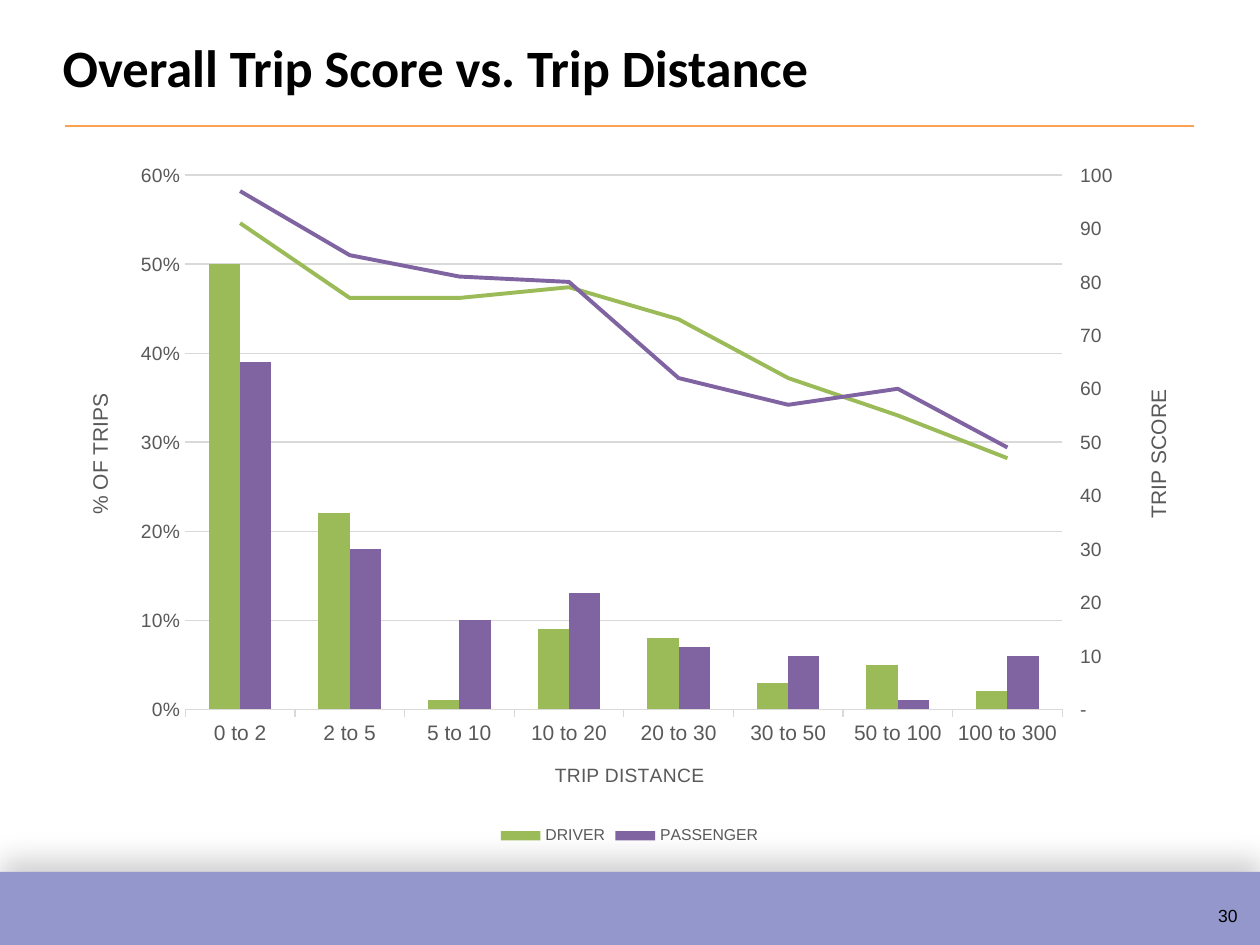
from copy import deepcopy

from pptx import Presentation
from pptx.chart.axis import CategoryAxis, ValueAxis
from pptx.chart.data import CategoryChartData
from pptx.dml.color import RGBColor
from pptx.enum.chart import XL_CHART_TYPE, XL_LEGEND_POSITION, XL_TICK_MARK
from pptx.enum.shapes import MSO_CONNECTOR, MSO_SHAPE
from pptx.enum.text import MSO_ANCHOR, PP_ALIGN
from pptx.oxml import parse_xml
from pptx.oxml.ns import nsdecls, qn
from pptx.util import Pt

SCALE = 914400 / 126
TITLE_ONLY = 5
COLUMNS = XL_CHART_TYPE.COLUMN_CLUSTERED
BOTTOM = XL_LEGEND_POSITION.BOTTOM
TICK_NONE, TICK_OUT = XL_TICK_MARK.NONE, XL_TICK_MARK.OUTSIDE
STRAIGHT = MSO_CONNECTOR.STRAIGHT
RECTANGLE = MSO_SHAPE.RECTANGLE
MIDDLE = MSO_ANCHOR.MIDDLE
LEFT, RIGHT = PP_ALIGN.LEFT, PP_ALIGN.RIGHT

BLACK, GREY, PALE = "000000", "595959", "D9D9D9"
GREEN, PURPLE = "9BBB59", "8064A2"
SCORE_FORMAT = '_(* #,##0_);_(* \\(#,##0\\);_(* "-"_);_(@_)'
DISTANCES = ["0 to 2", "2 to 5", "5 to 10", "10 to 20",
             "20 to 30", "30 to 50", "50 to 100", "100 to 300"]
SERIES = [
    ("DRIVER", [0.5, 0.22, 0.01, 0.09, 0.08, 0.03, 0.05, 0.02], GREEN),
    ("PASSENGER", [0.39, 0.18, 0.1, 0.13, 0.07, 0.06, 0.01, 0.06], PURPLE),
    ("Series 3", [91, 77, 77, 79, 73, 62, 55, 47], GREEN),
    ("Series 4", [97, 85, 81, 80, 62, 57, 60, 49], PURPLE),
]
SHARE_COUNT = 2


def px(*lengths):
    """Turn pixel lengths into EMU."""
    return [round(length * SCALE) for length in lengths]


def color(hex_string):
    """Turn a hex string into a colour."""
    return RGBColor.from_string(hex_string)


def set_font(font, size, hex_string, name="Arial", bold=False):
    """Format one font."""
    font.name, font.size, font.bold = name, Pt(size), bold
    font.color.rgb = color(hex_string)


def element(tag, content="", **attributes):
    """Make one chart XML element."""
    listed = "".join(f' {key}="{value}"' for key, value in attributes.items())
    return parse_xml(f'<c:{tag} {nsdecls("c")}{listed}>{content}</c:{tag}>')


def remove_children(parent, tag):
    """Remove every direct child with the given tag."""
    for child in parent.findall(qn(tag)):
        parent.remove(child)


def add_footer(slide):
    """Add the footer band, shadowed upwards, and the slide number."""
    band = slide.shapes.add_shape(RECTANGLE, *px(0, 872, 1260, 73))
    band.fill.solid()
    band.fill.fore_color.rgb = color("9497CC")
    band.line.fill.background()
    band._element.spPr.append(parse_xml(
        f'<a:effectLst {nsdecls("a")}>'
        f'<a:outerShdw blurRad="{Pt(16)}" dist="{Pt(8)}" dir="{277 * 60000}" rotWithShape="0">'
        f'<a:srgbClr val="{BLACK}"><a:alpha val="19000"/></a:srgbClr>'
        '</a:outerShdw></a:effectLst>'))
    box = slide.shapes.add_textbox(*px(1203, 888, 47, 43))
    box.text_frame.word_wrap = False
    para = box.text_frame.paragraphs[0]
    para.text = "30"
    para.alignment, para.line_spacing, para.space_before = RIGHT, 1.5, Pt(6)
    set_font(para.font, 10, BLACK)


def add_heading(slide, text):
    """Fill the title and draw the rule below it."""
    title = slide.shapes.title
    title.left, title.top, title.width, title.height = px(50, 28, 1153, 77)
    title.text_frame.text = text
    title.text_frame.vertical_anchor = MIDDLE
    para = title.text_frame.paragraphs[0]
    para.alignment = LEFT
    set_font(para.font, 30, BLACK, "Calibri", True)
    rule = slide.shapes.add_connector(STRAIGHT, *px(65, 126, 1194, 126))
    rule.line.color.rgb = color("FBA252")
    rule.line.width = Pt(1)
    rule._element.spPr.append(parse_xml(f'<a:effectLst {nsdecls("a")}/>'))


def pale_line(line):
    """Format an axis line or gridline."""
    line.color.rgb = color(PALE)
    line.width = Pt(0.75)


def style_axis(axis, title, title_size, label_size, tick):
    """Set an axis title, labels and ticks."""
    frame = axis.axis_title.text_frame
    frame.text = title
    set_font(frame.paragraphs[0].font, title_size, GREY)
    set_font(axis.tick_labels.font, label_size, GREY)
    axis.major_tick_mark, axis.minor_tick_mark = tick, TICK_NONE


def style_value_axis(axis, title, maximum, unit, number_format, tick):
    """Set the title, scale and number format of a value axis."""
    style_axis(axis, title, 12, 11, tick)
    axis.axis_title.text_frame._txBody.bodyPr.set("rot", "-5400000")
    axis.minimum_scale, axis.maximum_scale, axis.major_unit = 0, maximum, unit
    axis.tick_labels.number_format = number_format
    axis.tick_labels.number_format_is_linked = False
    axis.format.line.fill.background()


def move_to_lines(chart):
    """Move the score series to lines on a second pair of axes."""
    plot_area = chart._chartSpace.chart.plotArea
    bars = plot_area.find(qn("c:barChart"))
    lines = element("lineChart")
    lines.append(element("grouping", val="standard"))
    lines.append(element("varyColors", val=0))
    for series in bars.findall(qn("c:ser"))[SHARE_COUNT:]:
        remove_children(series, "c:invertIfNegative")
        marker = element("marker", '<c:symbol val="none"/>')
        series.find(qn("c:cat")).addprevious(marker)
        remove_children(series, "c:smooth")
        series.append(element("smooth", val=0))
        lines.append(series)
    lines.append(element("marker", val=1))
    bars.addnext(lines)

    category, value = chart.category_axis._element, chart.value_axis._element
    right, hidden = deepcopy(value), deepcopy(category)
    value.addnext(right)
    right.addnext(hidden)
    for axis, own, crossed in ((hidden, 50010, 50020), (right, 50020, 50010)):
        axis.find(qn("c:axId")).set("val", str(own))
        axis.find(qn("c:crossAx")).set("val", str(crossed))
        lines.append(element("axId", val=own))
    remove_children(right, "c:crosses")
    right.find(qn("c:crossAx")).addnext(element("crosses", val="max"))
    CategoryAxis(hidden).visible = False
    CategoryAxis(hidden).has_title = False
    score_axis = ValueAxis(right)
    score_axis.has_major_gridlines = False
    style_value_axis(score_axis, "TRIP SCORE", 100, 10, SCORE_FORMAT, TICK_OUT)


def set_plot_layout(chart, **fractions):
    """Place the inner plot area by fractions of the chart."""
    plot_area = chart._chartSpace.chart.plotArea
    remove_children(plot_area, "c:layout")
    parts = '<c:layoutTarget val="inner"/><c:xMode val="edge"/><c:yMode val="edge"/>'
    parts += "".join(f'<c:{key} val="{value}"/>' for key, value in fractions.items())
    plot_area.insert(0, element("layout", f"<c:manualLayout>{parts}</c:manualLayout>"))


def add_legend(chart):
    """Show a legend for the columns only."""
    chart.has_legend = True
    legend = chart.legend
    legend.position, legend.include_in_layout = BOTTOM, False
    set_font(legend.font, 9, GREY)
    entries = [element("legendEntry", f'<c:idx val="{index}"/><c:delete val="1"/>')
               for index in range(SHARE_COUNT, len(SERIES))]
    position = legend._element.get_or_add_legendPos()
    for entry in reversed(entries):
        position.addnext(entry)


def add_trip_chart(slide):
    """Add trip shares as columns and trip scores as lines."""
    data = CategoryChartData()
    data.categories = DISTANCES
    for name, values, _ in SERIES:
        data.add_series(name, values)
    chart = slide.shapes.add_chart(COLUMNS, *px(60, 147, 1139, 703), data).chart
    chart.has_title = False
    set_font(chart.font, 10, BLACK)
    plot = chart.plots[0]
    plot.gap_width, plot.overlap, plot.vary_by_categories = 150, 0, False
    for index, (series, (_, _, hue)) in enumerate(zip(plot.series, SERIES)):
        if index < SHARE_COUNT:
            series.format.fill.solid()
            series.format.fill.fore_color.rgb = color(hue)
        else:
            series.format.line.color.rgb = color(hue)
            series.format.line.width = Pt(2.25)
    style_axis(chart.category_axis, "TRIP DISTANCE", 11, 12, TICK_OUT)
    pale_line(chart.category_axis.format.line)
    style_value_axis(chart.value_axis, "% OF TRIPS", 0.6, 0.1, "0%", TICK_NONE)
    pale_line(chart.value_axis.major_gridlines.format.line)
    move_to_lines(chart)
    set_plot_layout(chart, x=0.11, y=0.04, w=0.77, h=0.76)
    add_legend(chart)


def main():
    """Build and save the slide."""
    deck = Presentation()
    deck.slide_width, deck.slide_height = px(1260, 945)
    slide = deck.slides.add_slide(deck.slide_layouts[TITLE_ONLY])
    add_footer(slide)
    add_heading(slide, "Overall Trip Score vs. Trip Distance")
    add_trip_chart(slide)
    deck.save("out.pptx")


if __name__ == "__main__":
    main()
